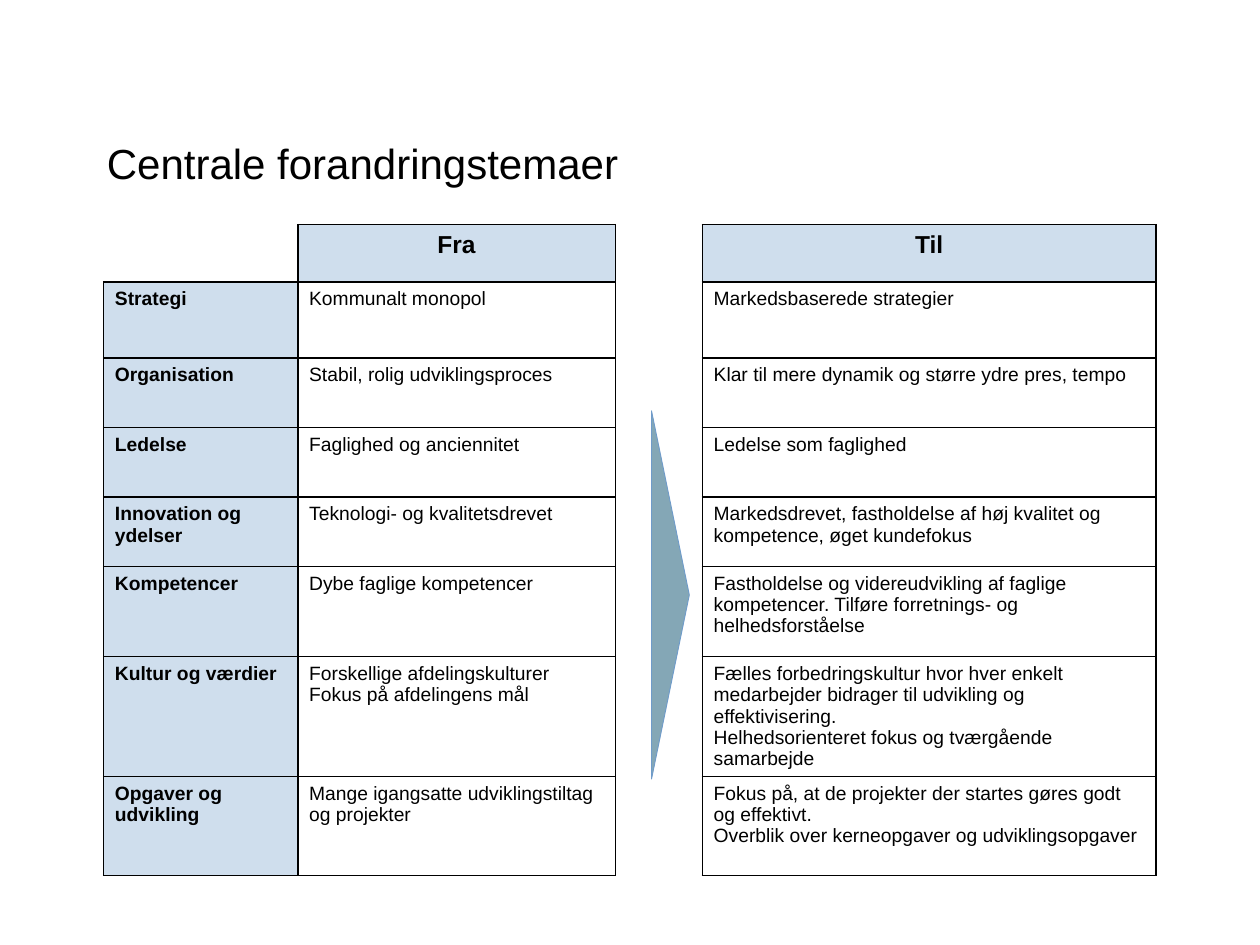
from lxml import etree
from pptx import Presentation
from pptx.dml.color import RGBColor
from pptx.enum.shapes import MSO_SHAPE
from pptx.enum.text import MSO_ANCHOR, PP_ALIGN
from pptx.oxml.ns import qn
from pptx.util import Pt

TRIANGLE = MSO_SHAPE.ISOSCELES_TRIANGLE
TOP, MIDDLE = MSO_ANCHOR.TOP, MSO_ANCHOR.MIDDLE
LEFT, CENTER = PP_ALIGN.LEFT, PP_ALIGN.CENTER

BLACK = RGBColor(0x00, 0x00, 0x00)
WHITE = RGBColor(0xFF, 0xFF, 0xFF)
PALE_BLUE = RGBColor(0xCF, 0xDE, 0xED)
ARROW_FILL = RGBColor(0x84, 0xA7, 0xB6)
ARROW_LINE = RGBColor(0x6F, 0x9B, 0xCA)

# Content: theme, from, to (lists hold one paragraph each)
TITLE = "Centrale forandringstemaer"
HEADER = ("", ["Fra"], ["Til"])
THEMES = [
    ("Strategi", ["Kommunalt monopol"], ["Markedsbaserede strategier"]),
    ("Organisation", ["Stabil, rolig udviklingsproces"],
     ["Klar til mere dynamik og større ydre pres, tempo"]),
    ("Ledelse", ["Faglighed og anciennitet"], ["Ledelse som faglighed"]),
    ("Innovation og ydelser", ["Teknologi- og kvalitetsdrevet"],
     ["Markedsdrevet, fastholdelse af høj kvalitet og kompetence, øget kundefokus"]),
    ("Kompetencer", ["Dybe faglige kompetencer"],
     ["Fastholdelse og videreudvikling af faglige kompetencer. "
      "Tilføre forretnings- og helhedsforståelse"]),
    ("Kultur og værdier",
     ["Forskellige afdelingskulturer", "Fokus på afdelingens mål"],
     ["Fælles forbedringskultur hvor hver enkelt medarbejder bidrager til "
      "udvikling og effektivisering.",
      "Helhedsorienteret fokus og tværgående samarbejde"]),
    ("Opgaver og udvikling", ["Mange igangsatte udviklingstiltag og projekter"],
     ["Fokus på, at de projekter der startes gøres godt og effektivt.",
      "Overblik over kerneopgaver og udviklingsopgaver"]),
]

# Layout in points
TABLE_LEFT, TABLE_TOP = 59.2, 128.4
COLUMN_WIDTHS = [111, 181.5, 49.7, 259.3]
ROW_HEIGHTS = [32.8, 43.4, 39.7, 39.7, 39.7, 51.5, 64.1, 56.6]
THEME_COLUMN, GAP_COLUMN = 0, 2
INSET_X, INSET_Y = 6.5, 3.6


def write(frame, paragraphs, size=11, bold=False, align=LEFT, color=BLACK):
    for index, text in enumerate(paragraphs):
        paragraph = frame.paragraphs[0] if index == 0 else frame.add_paragraph()
        paragraph.alignment = align
        run = paragraph.add_run()
        run.text = text
        run.font.name = "Arial"
        run.font.size = Pt(size)
        run.font.bold = bold
        run.font.color.rgb = color


def set_borders(cell, visible):
    properties = cell._tc.get_or_add_tcPr()
    for side in "LRTB":
        line = etree.SubElement(properties, qn(f"a:ln{side}"), w=str(Pt(1)))
        if side in visible:
            fill = etree.SubElement(line, qn("a:solidFill"))
            etree.SubElement(fill, qn("a:srgbClr"), val=str(BLACK))
        else:
            etree.SubElement(line, qn("a:noFill"))


prs = Presentation()
prs.slide_width, prs.slide_height = Pt(720), Pt(540)
slide = prs.slides.add_slide(prs.slide_layouts[6])

# Table of themes
rows = [HEADER] + THEMES
table = slide.shapes.add_table(
    len(rows), len(COLUMN_WIDTHS), Pt(TABLE_LEFT), Pt(TABLE_TOP),
    Pt(sum(COLUMN_WIDTHS)), Pt(sum(ROW_HEIGHTS))).table
for column, width in zip(table.columns, COLUMN_WIDTHS):
    column.width = Pt(width)
for row, height in zip(table.rows, ROW_HEIGHTS):
    row.height = Pt(height)

for r, (theme, before, after) in enumerate(rows):
    for c, paragraphs in enumerate(([theme], before, [], after)):
        cell = table.cell(r, c)
        is_header = r == 0
        is_corner = is_header and c == THEME_COLUMN
        is_gap = c == GAP_COLUMN
        is_label = (is_header or c == THEME_COLUMN) and not (is_corner or is_gap)
        set_borders(cell, "RB" if is_corner else "LR" if is_gap else "LRTB")
        cell.fill.solid()
        cell.fill.fore_color.rgb = PALE_BLUE if is_label else WHITE
        cell.margin_left = cell.margin_right = Pt(INSET_X)
        cell.margin_top = cell.margin_bottom = Pt(INSET_Y)
        cell.vertical_anchor = TOP
        if not (is_corner or is_gap):
            write(cell.text_frame, paragraphs, size=14 if is_header else 11,
                  bold=is_label, align=CENTER if is_header else LEFT)

# Arrow from "Fra" to "Til"
arrow = slide.shapes.add_shape(TRIANGLE, Pt(277.9), Pt(329.2), Pt(210.4), Pt(21.6))
arrow.rotation = 90
arrow.shadow.inherit = False
arrow.fill.solid()
arrow.fill.fore_color.rgb = ARROW_FILL
arrow.line.color.rgb = ARROW_LINE
arrow.line.width = Pt(0.5)

# Title
title = slide.shapes.add_textbox(Pt(54), Pt(66.2), Pt(612), Pt(54)).text_frame
title.word_wrap = True
title.vertical_anchor = MIDDLE
write(title, [TITLE], size=24)

prs.save("out.pptx")
